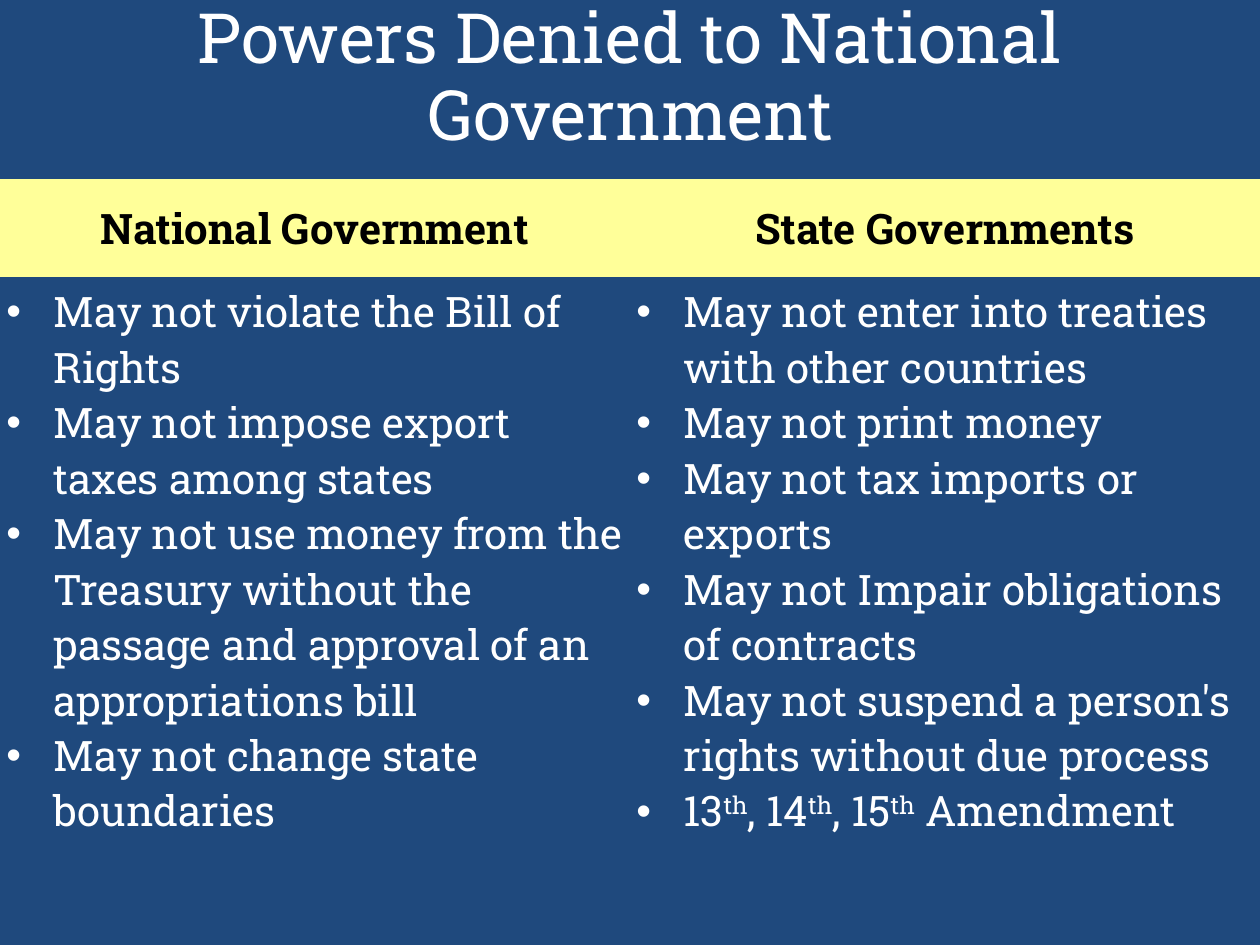
from lxml.etree import SubElement
from pptx import Presentation
from pptx.dml.color import RGBColor
from pptx.enum.text import MSO_ANCHOR, MSO_AUTO_SIZE, PP_ALIGN
from pptx.oxml.ns import qn
from pptx.util import Cm, Pt

NO_GRID_STYLE = "{2D5ABB26-0587-4C30-8999-92F81FD0307C}"
NATIONAL = [
    ["May not violate the Bill of Rights"],
    ["May not impose export taxes among states"],
    ["May not use money from the Treasury without the passage and approval of an appropriations bill"],
    ["May not change state boundaries"],
]
STATE = [
    ["May not enter into treaties with other countries"],
    ["May not print money"],
    ["May not tax imports or exports"],
    ["May not Impair obligations of contracts"],
    ["May not suspend a person's rights without due process"],
    ["13", "th", ", 14", "th", ", 15", "th", " Amendment"],
]
COLUMNS = [("National Government", NATIONAL), ("State Governments", STATE)]


def rgb(value):
    return RGBColor.from_string(value)


class Deck:
    """Slide style and the slide being built."""

    font, navy, yellow, white, black = "Roboto Slab", "1F497D", "FFFF99", "FFFFFF", "000000"

    def __init__(self, prs):
        self.s = prs.slides.add_slide(prs.slide_layouts[5])
        fill = self.s.background.fill
        fill.solid()
        fill.fore_color.rgb = rgb(self.navy)

    def run(self, p, text, size, color, bold=False):
        r = p.add_run()
        r.text = text
        r.font.name, r.font.size, r.font.bold = self.font, Pt(size), bold
        r.font.color.rgb = rgb(color)
        return r

    def title(self, text):
        sp = self.s.shapes.title
        sp.left, sp.top, sp.width, sp.height = Cm(0.64), Cm(0), Cm(24.13), Cm(3.18)
        tf = sp.text_frame
        tf.word_wrap, tf.auto_size = True, MSO_AUTO_SIZE.NONE
        tf.vertical_anchor = MSO_ANCHOR.MIDDLE
        p = tf.paragraphs[0]
        p.alignment, p.line_spacing = PP_ALIGN.CENTER, 0.92
        self.run(p, text, 39.6, self.white)

    def bullet(self, p, parts):
        pPr = p._p.get_or_add_pPr()
        pPr.set("marL", str(Cm(0.95)))
        pPr.set("indent", str(-Cm(0.95)))
        SubElement(pPr, qn("a:buFont"), typeface="Arial")
        SubElement(pPr, qn("a:buChar"), char="•")
        tabs = SubElement(pPr, qn("a:tabLst"))
        SubElement(tabs, qn("a:tab"), pos=str(Cm(1.27)), algn="l")
        for part in parts:
            r = self.run(p, part, 24, self.white)
            if part == "th":
                r.font._element.set("baseline", "30000")

    def header(self, cell, text):
        cell.fill.solid()
        cell.fill.fore_color.rgb = rgb(self.yellow)
        cell.vertical_anchor = MSO_ANCHOR.MIDDLE
        p = cell.text_frame.paragraphs[0]
        p.alignment = PP_ALIGN.CENTER
        self.run(p, text, 24, self.black, bold=True)

    def bullets(self, cell, items):
        cell.fill.background()
        tf = cell.text_frame
        for i, parts in enumerate(items):
            self.bullet(tf.add_paragraph() if i else tf.paragraphs[0], parts)

    def table(self, columns):
        frame = self.s.shapes.add_table(2, len(columns), Cm(0), Cm(3.61), Cm(25.4), Cm(13.44))
        table = frame.table
        table.first_row = table.horz_banding = False
        table._tbl.tblPr.find(qn("a:tableStyleId")).text = NO_GRID_STYLE
        table.rows[0].height, table.rows[1].height = Cm(1.98), Cm(11.46)
        for cell in table.iter_cells():
            cell.margin_left = cell.margin_right = Cm(0.13)
            cell.margin_top = cell.margin_bottom = Cm(0.13)
        for col, (heading, items) in enumerate(columns):
            self.header(table.cell(0, col), heading)
            self.bullets(table.cell(1, col), items)


def main():
    prs = Presentation()
    prs.slide_width, prs.slide_height = Cm(25.4), Cm(19.05)
    deck = Deck(prs)
    deck.title("Powers Denied to National Government")
    deck.table(COLUMNS)
    prs.save("out.pptx")


if __name__ == "__main__":
    main()
